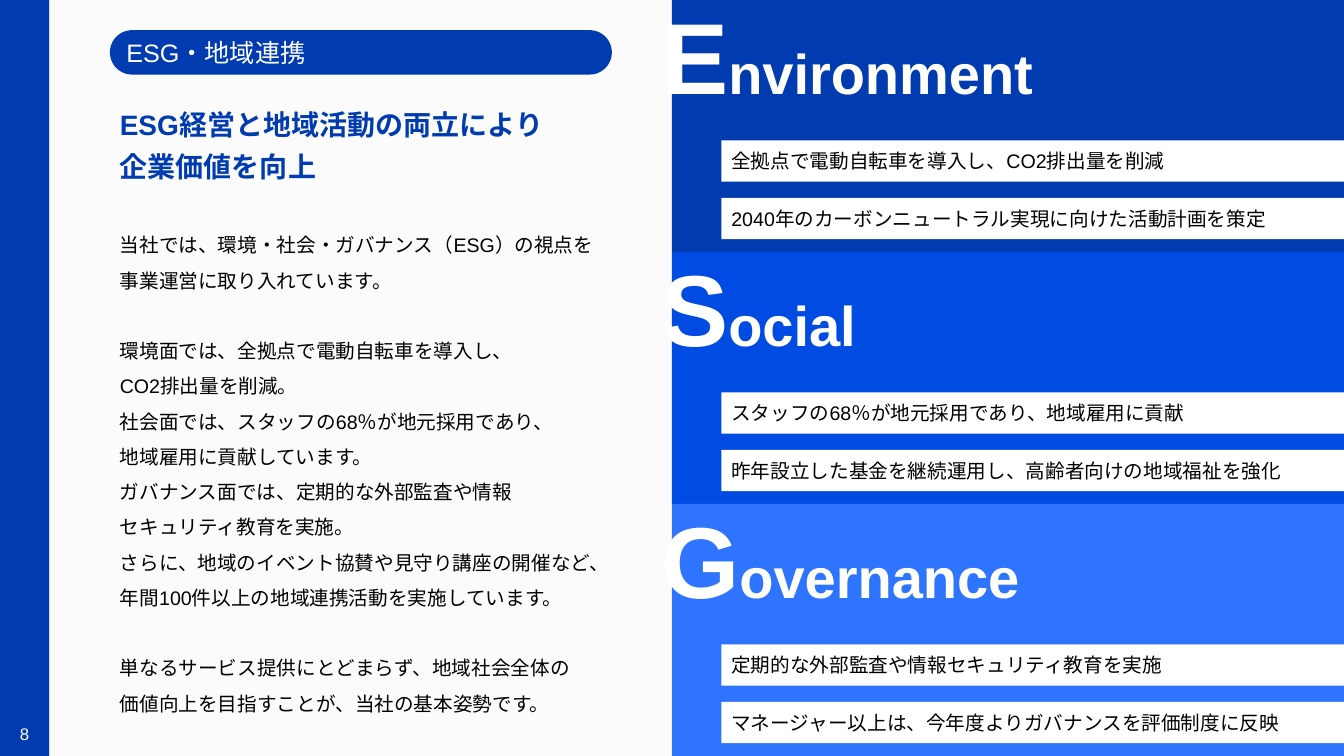
"""Build the ESG and regional cooperation slide."""
from dataclasses import dataclass

from pptx import Presentation
from pptx import util as u
from pptx.dml.color import RGBColor
from pptx.enum import lang, shapes, text
from pptx.oxml import xmlchemy as x

NAVY = RGBColor(0x00, 0x3B, 0xB0)
BLUE = RGBColor(0x00, 0x4B, 0xE2)
SKY = RGBColor(0x2F, 0x74, 0xFF)
PAPER = RGBColor(0xFB, 0xFB, 0xFB)
WHITE = RGBColor(0xFF, 0xFF, 0xFF)
BLACK = RGBColor(0x00, 0x00, 0x00)
FONT = "Arial"
WIDTH, HEIGHT = 33.87, 19.05
STRIP_W = 1.24
HALF = 16.93
BAND_H = HEIGHT / 3
LEFT, COLUMN_W, BODY_W = 2.77, 12.65, 13.2
ITEM_LEFT, ITEM_TOP, ITEM_H, ITEM_PITCH = 18.18, 3.54, 1.04, 1.45
TITLE_LEFT, TITLE_TOP, TITLE_W, TITLE_H = 16.41, 0.03, 15.68, 1.17


@dataclass
class Box:
    left: float
    top: float
    width: float
    height: float

    def emu(self) -> list[u.Length]:
        return [u.Cm(v) for v in (self.left, self.top, self.width, self.height)]


@dataclass
class Style:
    size: float
    color: RGBColor
    bold: bool = False
    align: text.PP_ALIGN = text.PP_ALIGN.LEFT
    anchor: text.MSO_ANCHOR = text.MSO_ANCHOR.MIDDLE
    line: float = 1.0


@dataclass
class Pillar:
    name: str
    color: RGBColor
    items: tuple[str, str]


PILLARS = [
    Pillar("Environment", NAVY, (
        "全拠点で電動自転車を導入し、CO2排出量を削減",
        "2040年のカーボンニュートラル実現に向けた活動計画を策定")),
    Pillar("Social", BLUE, (
        "スタッフの68％が地元採用であり、地域雇用に貢献",
        "昨年設立した基金を継続運用し、高齢者向けの地域福祉を強化")),
    Pillar("Governance", SKY, (
        "定期的な外部監査や情報セキュリティ教育を実施",
        "マネージャー以上は、今年度よりガバナンスを評価制度に反映")),
]
HEADING = ["ESG経営と地域活動の両立により", "企業価値を向上"]
BODY = [
    ["当社では、環境・社会・ガバナンス（ESG）の視点を",
     "事業運営に取り入れています。"],
    ["環境面では、全拠点で電動自転車を導入し、",
     "CO2排出量を削減。",
     "社会面では、スタッフの68％が地元採用であり、",
     "地域雇用に貢献しています。",
     "ガバナンス面では、定期的な外部監査や情報",
     "セキュリティ教育を実施。",
     "さらに、地域のイベント協賛や見守り講座の開催など、",
     "年間100件以上の地域連携活動を実施しています。"],
    ["単なるサービス提供にとどまらず、地域社会全体の",
     "価値向上を目指すことが、当社の基本姿勢です。"],
]
ITEM = Style(14, BLACK)
TITLE = Style(40, WHITE, bold=True, line=1.5)


def format_run(r, style: Style) -> None:
    """Apply the style to one run, for Latin and East Asian text."""
    r.font.name = FONT
    r.font.size = u.Pt(style.size)
    r.font.bold = style.bold
    r.font.color.rgb = style.color
    r.font.language_id = lang.MSO_LANGUAGE_ID.JAPANESE
    ea = x.OxmlElement("a:ea")
    ea.set("typeface", FONT)
    r.font._element.find("{*}latin").addnext(ea)


def write(s, lines: list[str], style: Style):
    """Write the lines as paragraphs of a shape and return its text frame."""
    tf = s.text_frame
    tf.word_wrap = True
    tf.vertical_anchor = style.anchor
    tf.text = "\n".join(lines)
    for p in tf.paragraphs:
        p.alignment = style.align
        p.line_spacing = style.line
        for r in p.runs:
            format_run(r, style)
    return tf


def add_block(sl, box: Box, color: RGBColor,
              kind: shapes.MSO_SHAPE = shapes.MSO_SHAPE.RECTANGLE):
    """Add a flat filled shape without an outline."""
    s = sl.shapes.add_shape(kind, *box.emu())
    s.shadow.inherit = False
    s.fill.solid()
    s.fill.fore_color.rgb = color
    s.line.fill.background()
    return s


def add_text(sl, box: Box, lines: list[str], style: Style):
    """Add a text box and return its text frame."""
    return write(sl.shapes.add_textbox(*box.emu()), lines, style)


def add_left_column(sl) -> None:
    """Draw the strip, page number, label, heading and body text."""
    add_block(sl, Box(STRIP_W, 0, HALF - STRIP_W, HEIGHT), PAPER)
    pill = add_block(sl, Box(LEFT, 0.76, COLUMN_W, 1.12), NAVY,
                     shapes.MSO_SHAPE.ROUNDED_RECTANGLE)
    pill.adjustments[0] = 0.5
    write(pill, ["ESG・地域連携"], Style(18, WHITE))
    add_block(sl, Box(0, 0, STRIP_W, HEIGHT), NAVY)
    add_text(sl, Box(0.1, 18.06, 1.04, 0.84), ["8"],
             Style(12, WHITE, align=text.PP_ALIGN.CENTER))
    body = Style(14, BLACK, anchor=text.MSO_ANCHOR.TOP, line=1.5)
    tf = add_text(sl, Box(LEFT, 5.46, BODY_W, 12.78), sum(BODY, []), body)
    openings = [block[0] for block in BODY[1:]]
    for p in tf.paragraphs:
        if p.text in openings:
            p.space_before = u.Pt(25)
    tf = add_text(sl, Box(LEFT, 2.55, COLUMN_W, 2.21), HEADING,
                  Style(20, NAVY, bold=True))
    tf.paragraphs[1].space_before = u.Pt(6)


def add_pillar(sl, index: int, pillar: Pillar) -> None:
    """Draw one coloured band with its items and title."""
    top = index * BAND_H
    add_block(sl, Box(HALF, top, WIDTH - HALF, BAND_H), pillar.color)
    for row, item in enumerate(pillar.items):
        box = Box(ITEM_LEFT, top + ITEM_TOP + row * ITEM_PITCH,
                  WIDTH - ITEM_LEFT, ITEM_H)
        write(add_block(sl, box, WHITE), [item], ITEM)
    box = Box(TITLE_LEFT, top + TITLE_TOP, TITLE_W, TITLE_H)
    p = add_text(sl, box, [pillar.name[0]], TITLE).paragraphs[0]
    p.runs[0].font.size = u.Pt(72)
    r = p.add_run()
    r.text = pillar.name[1:]
    format_run(r, TITLE)


def main() -> None:
    """Build and save the presentation."""
    prs = Presentation()
    prs.slide_width, prs.slide_height = u.Cm(WIDTH), u.Cm(HEIGHT)
    sl = prs.slides.add_slide(prs.slide_layouts[6])
    add_left_column(sl)
    for index, pillar in enumerate(PILLARS):
        add_pillar(sl, index, pillar)
    prs.save("out.pptx")


if __name__ == "__main__":
    main()
